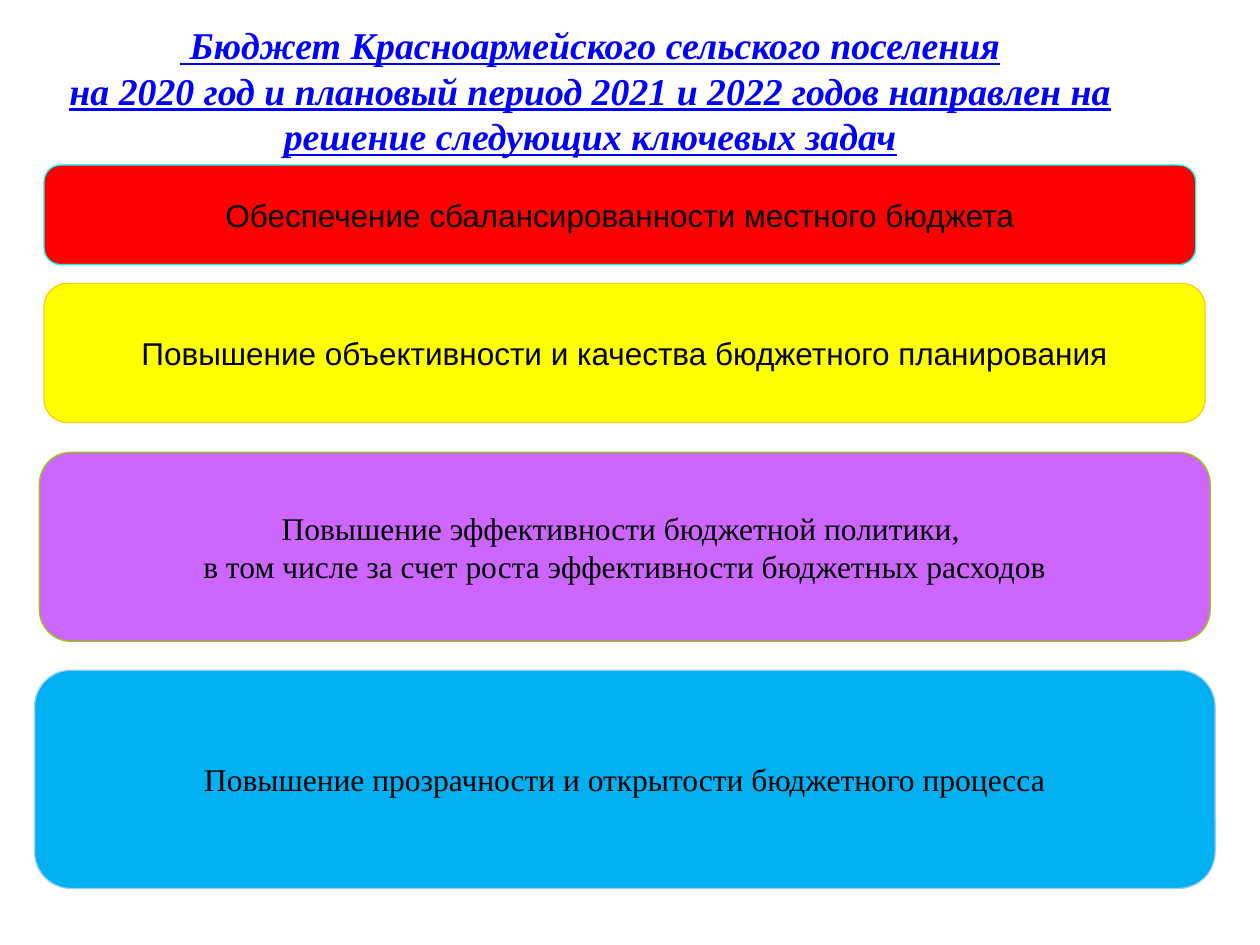
from pptx import Presentation
from pptx.dml.color import RGBColor
from pptx.enum.shapes import MSO_SHAPE
from pptx.enum.text import MSO_ANCHOR, MSO_AUTO_SIZE, PP_ALIGN
from pptx.util import Pt

BLACK = RGBColor(0x00, 0x00, 0x00)
BLUE = RGBColor(0x00, 0x00, 0xFF)
RED = RGBColor(0xFF, 0x00, 0x00)
CYAN = RGBColor(0x00, 0xFF, 0xFF)
YELLOW = RGBColor(0xFF, 0xFF, 0x00)
GOLD = RGBColor(0xFF, 0xCC, 0x00)
VIOLET = RGBColor(0xCC, 0x66, 0xFF)
GREEN = RGBColor(0x99, 0xCC, 0x00)
SKY = RGBColor(0x00, 0xB0, 0xF0)
PALE_BLUE = RGBColor(0x99, 0xCC, 0xFF)
SERIF = "Times New Roman"
SANS = "Arial"


def format_text(text_frame, font_name, size, color):
    text_frame.vertical_anchor = MSO_ANCHOR.MIDDLE
    for paragraph in text_frame.paragraphs:
        paragraph.alignment = PP_ALIGN.CENTER
        for run in paragraph.runs:
            run.font.name = font_name
            run.font.size = Pt(size)
            run.font.color.rgb = color


presentation = Presentation()
presentation.slide_width = Pt(720)
presentation.slide_height = Pt(540)
slide = presentation.slides.add_slide(presentation.slide_layouts[5])

title = slide.shapes.title
title.left, title.top, title.width, title.height = Pt(0), Pt(20.2), Pt(674.6), Pt(62.6)
title.text_frame.text = (
    " Бюджет Красноармейского сельского поселения\v"
    "на 2020 год и плановый период 2021 и 2022 годов направлен на решение следующих ключевых задач"
)
title.text_frame.word_wrap = True
title.text_frame.auto_size = MSO_AUTO_SIZE.NONE
format_text(title.text_frame, SERIF, 21.6, BLUE)
for run in title.text_frame.paragraphs[0].runs:
    run.font.bold = run.font.italic = run.font.underline = True

tasks = [
    ("Обеспечение сбалансированности местного бюджета",
     SANS, RED, CYAN, (25.2, 94.3, 658.1, 56.9)),
    ("Повышение объективности и качества бюджетного планирования",
     SANS, YELLOW, GOLD, (25.2, 162, 663.4, 79.4)),
    ("Повышение эффективности бюджетной политики, \n"
     "в том числе за счет роста эффективности бюджетных расходов",
     SERIF, VIOLET, GREEN, (22.5, 258.5, 669.1, 108)),
    ("Повышение прозрачности и открытости бюджетного процесса",
     SERIF, SKY, PALE_BLUE, (19.8, 383, 674.6, 124.7)),
]
for text, font_name, fill_color, line_color, box in tasks:
    shape = slide.shapes.add_shape(MSO_SHAPE.ROUNDED_RECTANGLE, *map(Pt, box))
    shape.shadow.inherit = False
    shape.fill.solid()
    shape.fill.fore_color.rgb = fill_color
    shape.line.color.rgb = line_color
    shape.line.width = Pt(0.75)
    shape.text_frame.text = text
    shape.text_frame.word_wrap = False
    format_text(shape.text_frame, font_name, 18, BLACK)

presentation.save("out.pptx")
